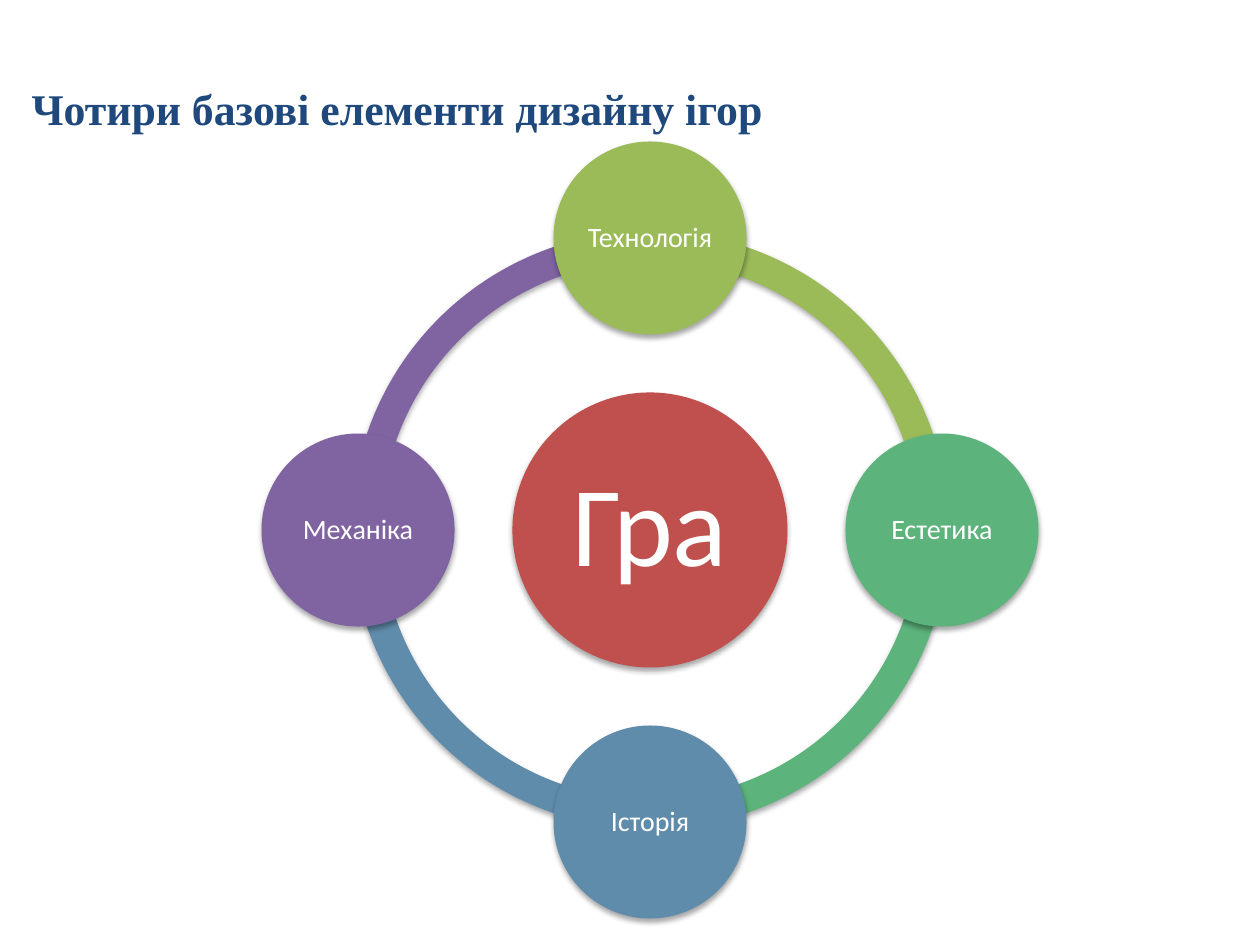
import math
from dataclasses import dataclass

import pptx
import pptx.dml.color
import pptx.enum.shapes
import pptx.enum.text
import pptx.oxml
import pptx.oxml.ns
import pptx.util

# Content: satellites clockwise from the top, each with its colour
TITLE = "Чотири базові елементи дизайну ігор"
CENTRE = "Гра"
ELEMENTS = [
    ("Технологія", "9BBB59"),
    ("Естетика", "5CB37C"),
    ("Історія", "608CAB"),
    ("Механіка", "8064A2"),
]


@dataclass(frozen=True)
class Theme:
    title_font: str = "Times New Roman"
    body_font: str = "Calibri"
    title_colour: str = "1F497D"
    centre_colour: str = "C0504D"
    label_colour: str = "FFFFFF"
    title_size: int = 25
    centre_size: int = 65
    label_size: int = 16


THEME = Theme()

# Geometry in px
PX = 914400 / 126
SLIDE_SIZE = (1260, 945)
TITLE_BOX = (15, 76, 764, 65)
HUB_X, HUB_Y = 650, 530
ORBIT = 292
RING_SIZE = 598
RING_THICKNESS = 0.05
HUB_SIZE = 275
SATELLITE_SIZE = 193
HUB_INSET, SATELLITE_INSET = 11, 3

SHADOW = (
    '<a:effectLst %s><a:outerShdw blurRad="40000" dist="23000" dir="5400000" '
    'rotWithShape="0"><a:srgbClr val="000000"><a:alpha val="35000"/></a:srgbClr>'
    "</a:outerShdw></a:effectLst>" % pptx.oxml.ns.nsdecls("a")
)


def px(length):
    return pptx.util.Emu(round(length * PX))


def rgb(value):
    return pptx.dml.color.RGBColor.from_string(value)


def write(shape, text, font_name, size, colour, bold=False):
    paragraph = shape.text_frame.paragraphs[0]
    paragraph.text = text
    paragraph.alignment = pptx.enum.text.PP_ALIGN.CENTER
    font = paragraph.runs[0].font
    font.name, font.size, font.bold = font_name, pptx.util.Pt(size), bold
    font.color.rgb = rgb(colour)
    return paragraph


def add_round_shape(slide, kind, centre_x, centre_y, size, colour):
    shape = slide.shapes.add_shape(
        kind, px(centre_x - size / 2), px(centre_y - size / 2), px(size), px(size))
    shape.fill.solid()
    shape.fill.fore_color.rgb = rgb(colour)
    shape.line.fill.background()
    shape.shadow.inherit = False
    properties = shape.fill._xPr
    properties.replace(properties.find(pptx.oxml.ns.qn("a:effectLst")),
                       pptx.oxml.parse_xml(SHADOW))
    return shape


def add_circle(slide, text, centre_x, centre_y, size, colour, text_size, inset):
    circle = add_round_shape(slide, pptx.enum.shapes.MSO_SHAPE.OVAL,
                             centre_x, centre_y, size, colour)
    frame = circle.text_frame
    frame.word_wrap = True
    frame.vertical_anchor = pptx.enum.text.MSO_ANCHOR.MIDDLE
    frame.margin_left = frame.margin_right = px(inset)
    frame.margin_top = frame.margin_bottom = px(inset)
    paragraph = write(circle, text, THEME.body_font, text_size, THEME.label_colour)
    paragraph.line_spacing = 0.9


def main():
    presentation = pptx.Presentation()
    presentation.slide_width, presentation.slide_height = map(px, SLIDE_SIZE)
    slide = presentation.slides.add_slide(presentation.slide_layouts[6])

    # Title
    title = slide.shapes.add_textbox(*map(px, TITLE_BOX))
    title.text_frame.word_wrap = False
    write(title, TITLE, THEME.title_font, THEME.title_size, THEME.title_colour, bold=True)

    # Ring: each arc runs clockwise from its element to the next one
    step = 360 / len(ELEMENTS)
    angles = [(270 + step * index) % 360 for index in range(len(ELEMENTS))]
    for angle, (_, colour) in reversed(list(zip(angles, ELEMENTS))):
        arc = add_round_shape(slide, pptx.enum.shapes.MSO_SHAPE.BLOCK_ARC,
                              HUB_X, HUB_Y, RING_SIZE, colour)
        # Angle adjustments count 60000ths of a degree, scaled by 100000
        arc.adjustments[0] = angle * 0.6
        arc.adjustments[1] = (angle + step) % 360 * 0.6
        arc.adjustments[2] = RING_THICKNESS

    # Hub and satellites
    add_circle(slide, CENTRE, HUB_X, HUB_Y, HUB_SIZE, THEME.centre_colour,
               THEME.centre_size, HUB_INSET)
    for angle, (name, colour) in zip(angles, ELEMENTS):
        add_circle(slide, name,
                   HUB_X + ORBIT * math.cos(math.radians(angle)),
                   HUB_Y + ORBIT * math.sin(math.radians(angle)),
                   SATELLITE_SIZE, colour, THEME.label_size, SATELLITE_INSET)

    presentation.save("out.pptx")


if __name__ == "__main__":
    main()
